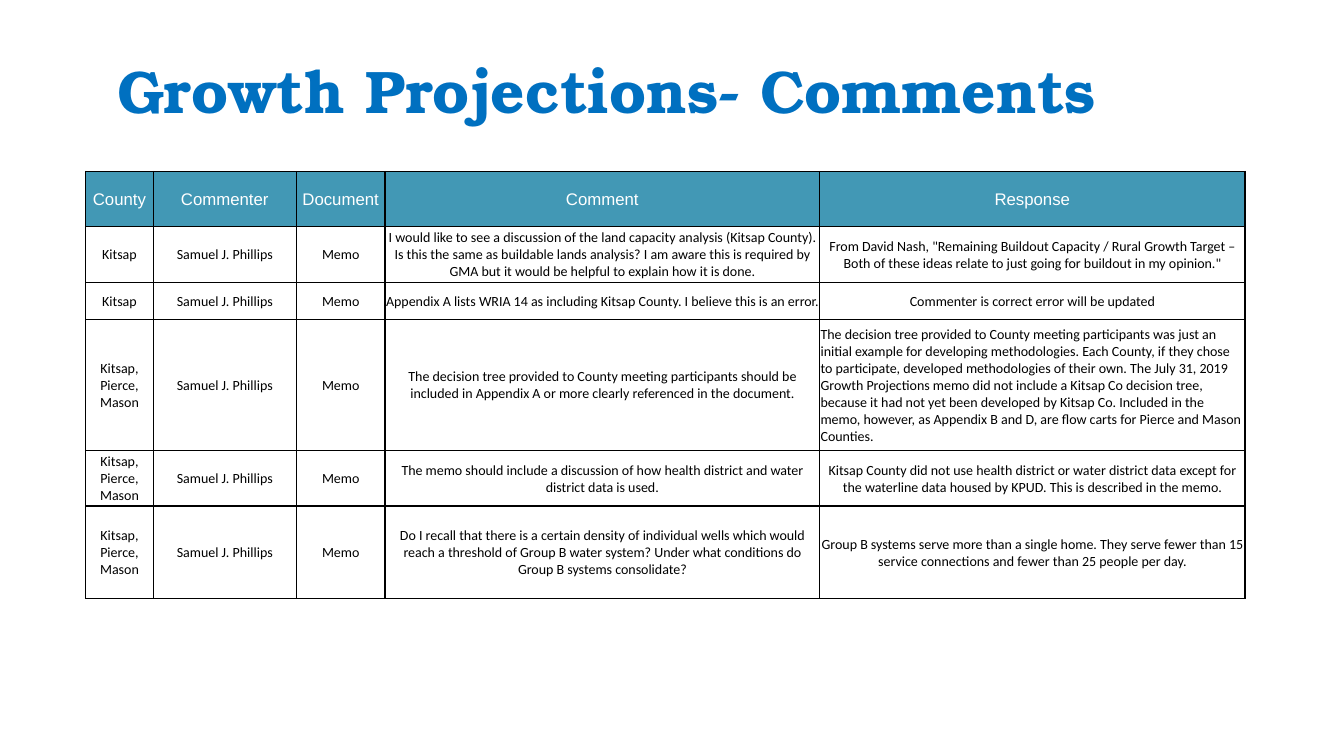
from lxml import etree
from pptx import Presentation
from pptx import util as u
from pptx.dml.color import RGBColor
from pptx.enum import text
from pptx.oxml import ns


def color(value):
    return RGBColor.from_string(value)


def write(frame, words, font="Calibri", size=10, ink="000000", bold=False,
          align=text.PP_ALIGN.CENTER):
    frame.word_wrap = True
    para = frame.paragraphs[0]
    para.alignment = align
    span = para.add_run()
    span.text = words
    span.font.name = font
    span.font.size = u.Pt(size)
    span.font.bold = bold
    span.font.color.rgb = color(ink)


deck = Presentation()
deck.slide_width, deck.slide_height = u.Inches(13.33), u.Inches(7.5)
page = deck.slides.add_slide(deck.slide_layouts[6])

title = page.shapes.add_textbox(u.Inches(0.27), u.Inches(0.16), u.Inches(11.5), u.Inches(1.45))
title.text_frame.vertical_anchor = text.MSO_ANCHOR.MIDDLE
write(title.text_frame, "Growth Projections- Comments",
      font="TeX Gyre Bonum", size=42.9, ink="0070C0", bold=True)

commenter, document = "Samuel J. Phillips", "Memo"
three_counties = "Kitsap, Pierce, Mason"
comments = [
    ("Kitsap",
     "I would like to see a discussion of the land capacity analysis (Kitsap County). Is this the same as buildable lands analysis? I am aware this is required by GMA but it would be helpful to explain how it is done.",
     "From David Nash, \"Remaining Buildout Capacity / Rural Growth Target – Both of these ideas relate to just going for buildout in my opinion.\""),
    ("Kitsap",
     "Appendix A lists WRIA 14 as including Kitsap County. I believe this is an error.",
     "Commenter is correct error will be updated"),
    (three_counties,
     "The decision tree provided to County meeting participants should be included in Appendix A or more clearly referenced in the document.",
     "The decision tree provided to County meeting participants was just an initial example for developing methodologies. Each County, if they chose to participate, developed methodologies of their own. The July 31, 2019 Growth Projections memo did not include a Kitsap Co decision tree, because it had not yet been developed by Kitsap Co. Included in the memo, however, as Appendix B and D, are flow carts for Pierce and Mason Counties."),
    (three_counties,
     "The memo should include a discussion of how health district and water district data is used.",
     "Kitsap County did not use health district or water district data except for the waterline data housed by KPUD. This is described in the memo."),
    (three_counties,
     "Do I recall that there is a certain density of individual wells which would reach a threshold of Group B water system? Under what conditions do Group B systems consolidate?",
     "Group B systems serve more than a single home. They serve fewer than 15 service connections and fewer than 25 people per day."),
]
rows = [("County", "Commenter", "Document", "Comment", "Response")]
rows += [(county, commenter, document, comment, response)
         for county, comment, response in comments]

widths = [0.67, 1.42, 0.88, 4.31, 4.22]
heights = [0.55, 0.55, 0.37, 1.3, 0.55, 0.92]
table = page.shapes.add_table(len(heights), len(widths), u.Inches(0.85), u.Inches(1.7),
                              u.Inches(sum(widths)), u.Inches(sum(heights))).table
for column, width in zip(table.columns, widths):
    column.width = u.Inches(width)

for row_index, (row, height) in enumerate(zip(rows, heights)):
    table.rows[row_index].height = u.Inches(height)
    for column_index, words in enumerate(row):
        cell = table.cell(row_index, column_index)
        cell.margin_left = cell.margin_right = cell.margin_top = u.Inches(0.01)
        cell.margin_bottom = 0
        cell.vertical_anchor = text.MSO_ANCHOR.MIDDLE
        properties = cell._tc.get_or_add_tcPr()
        for side in ("lnL", "lnR", "lnT", "lnB"):
            border = etree.SubElement(properties, ns.qn(f"a:{side}"), w=str(u.Pt(1)))
            paint = etree.SubElement(border, ns.qn("a:solidFill"))
            etree.SubElement(paint, ns.qn("a:srgbClr"), val="000000")
        cell.fill.solid()
        if row_index == 0:
            cell.fill.fore_color.rgb = color("4298B5")
            write(cell.text_frame, words, font="Arial", size=12, ink="FFFFFF")
        else:
            cell.fill.fore_color.rgb = color("FFFFFF")
            long_response = len(words) > 300
            write(cell.text_frame, words,
                  align=text.PP_ALIGN.LEFT if long_response else text.PP_ALIGN.CENTER)

deck.save("out.pptx")
